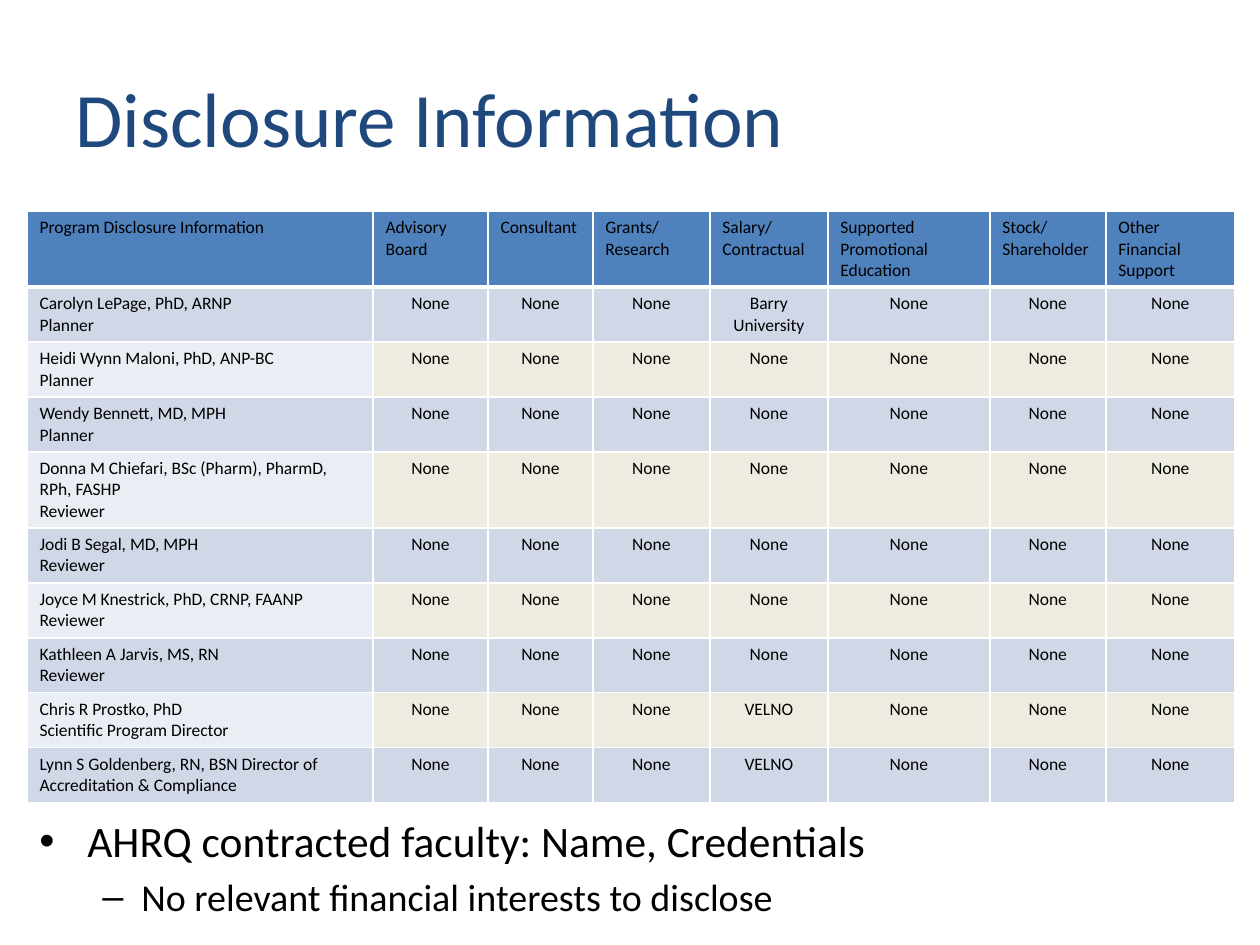
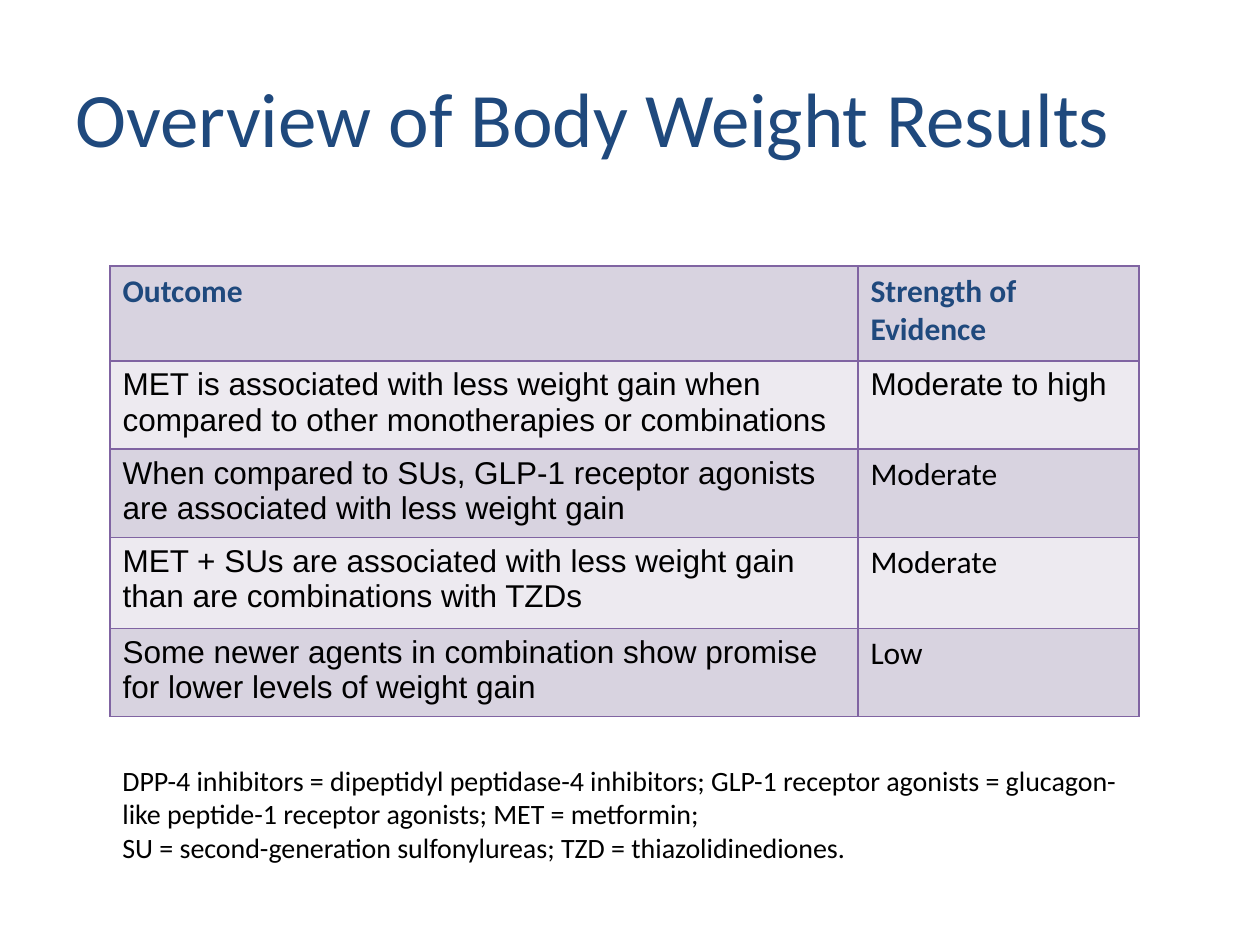
"""Build the disclosure and body weight results slides."""
import lxml.etree
import pptx
import pptx.dml.color
import pptx.enum.text
import pptx.oxml.ns
import pptx.util

PAGE = (1260, 945)
TITLE_BOX = (63, 38, 1134, 158)

THEME = {
    "body_font": "Calibri", "result_font": "Arial",
    "title": "1F497D", "ink": "000000", "white": "FFFFFF",
    "head": "4F81BD", "band": "D0D8E8", "pale_name": "E9EDF4", "pale_value": "EEECE1",
    "violet": "8064A2", "violet_band": "D8D3E0", "violet_pale": "EDEAF0",
    "title_size": 44, "point_size": 24.8, "subpoint_size": 21.7,
    "disclosure_size": 10, "result_size": 18, "note_size": 16,
}

DISCLOSURE_TITLE = "Disclosure Information"
DISCLOSURE_HEADS = [
    "Program Disclosure Information", "Advisory Board", "Consultant", "Grants/\nResearch",
    "Salary/\nContractual", "Supported Promotional Education", "Stock/Shareholder",
    "Other Financial Support",
]
PEOPLE = [
    ("Carolyn LePage, PhD, ARNP\nPlanner", "Barry University"),
    ("Heidi Wynn Maloni, PhD, ANP-BC\nPlanner", "None"),
    ("Wendy Bennett, MD, MPH\nPlanner", "None"),
    ("Donna M Chiefari, BSc (Pharm), PharmD, RPh, FASHP\nReviewer", "None"),
    ("Jodi B Segal, MD, MPH\nReviewer", "None"),
    ("Joyce M Knestrick, PhD, CRNP, FAANP\nReviewer", "None"),
    ("Kathleen A Jarvis, MS, RN\nReviewer", "None"),
    ("Chris R Prostko, PhD\nScientific Program Director", "VELNO"),
    ("Lynn S Goldenberg, RN, BSN Director of Accreditation & Compliance", "VELNO"),
]
SALARY_COLUMN = DISCLOSURE_HEADS.index("Salary/\nContractual")
DISCLOSURE_ORIGIN = (27, 211)
DISCLOSURE_WIDTHS = [346, 115, 105, 117, 118, 162, 116, 129]
DISCLOSURE_HEIGHTS = [76, 55, 55, 55, 76, 55, 55, 55, 55, 55]
FACULTY_BOX = (27, 808, 1208, 103)
FACULTY_POINTS = [
    ("AHRQ contracted faculty: Name, Credentials",
     {"size": THEME["point_size"], "bullet": "•", "indent": (48, 48)}),
    ("No relevant financial interests to disclose",
     {"size": THEME["subpoint_size"], "bullet": "–", "indent": (102, 39),
      "level": 1, "before": 4.3}),
]

RESULTS_TITLE = "Overview of Body Weight Results"
RESULTS_HEADS = ["Outcome", "Strength of Evidence"]
RESULTS = [
    ("MET is associated with less weight gain when compared to other monotherapies "
     "or combinations", "Moderate to high"),
    ("When compared to SUs, GLP-1 receptor agonists are associated with less weight gain",
     "Moderate"),
    ("MET + SUs are associated with less weight gain than are combinations with TZDs",
     "Moderate"),
    ("Some newer agents in combination show promise for lower levels of weight gain", "Low"),
]
RESULTS_ORIGIN = (110, 266)
RESULTS_WIDTHS = [748, 281]
RESULTS_HEIGHTS = [95, 88, 88, 91, 88]
NOTE_BOX = (110, 757, 1029, 115)
ABBREVIATIONS = [
    "DPP-4 inhibitors = dipeptidyl peptidase-4 inhibitors; GLP-1 receptor agonists = "
    "glucagon-like peptide-1 receptor agonists; MET = metformin;",
    "SU = second-generation sulfonylureas; TZD = thiazolidinediones.",
]


def px(length):
    return round(length * 914400 / 126)


def rgb(color):
    return pptx.dml.color.RGBColor.from_string(color)


def add_element(parent, tag, **attributes):
    return lxml.etree.SubElement(parent, pptx.oxml.ns.qn(tag), attributes)


def write(paragraph, text, size, color=THEME["ink"], font=THEME["body_font"], bold=False,
          centered=False, bullet=None, indent=(0, 0), level=0, before=0):
    paragraph.text = text
    paragraph.level = level
    paragraph.space_before = pptx.util.Pt(before)
    align = pptx.enum.text.PP_ALIGN
    paragraph.alignment = align.CENTER if centered else align.LEFT
    if bullet:
        properties = paragraph._p.get_or_add_pPr()
        properties.set("marL", str(px(indent[0])))
        properties.set("indent", str(-px(indent[1])))
        add_element(properties, "a:buFont", typeface="Arial")
        add_element(properties, "a:buChar", char=bullet)
    for run in paragraph.runs:
        run.font.size = pptx.util.Pt(size)
        run.font.name = font
        run.font.bold = bold
        run.font.color.rgb = rgb(color)
    for line_break in paragraph._p.findall(pptx.oxml.ns.qn("a:br")):
        add_element(line_break, "a:rPr", sz=str(round(size * 100)))


def add_text(slide, box, lines, middle=False):
    frame = slide.shapes.add_textbox(*map(px, box)).text_frame
    frame.word_wrap = True
    anchor = pptx.enum.text.MSO_ANCHOR
    frame.vertical_anchor = anchor.MIDDLE if middle else anchor.TOP
    for number, (text, style) in enumerate(lines):
        write(frame.add_paragraph() if number else frame.paragraphs[0], text, **style)


def add_titled_slide(deck, title):
    slide = deck.slides.add_slide(deck.slide_layouts[6])
    style = {"size": THEME["title_size"], "color": THEME["title"]}
    add_text(slide, TITLE_BOX, [(title, style)], middle=True)
    return slide


def set_borders(cell, color, top=1, bottom=1):
    properties = cell._tc.get_or_add_tcPr()
    edges = (("a:lnL", 1), ("a:lnR", 1), ("a:lnT", top), ("a:lnB", bottom))
    for position, (tag, points) in enumerate(edges):
        edge = add_element(properties, tag, w=str(pptx.util.Pt(points)))
        add_element(add_element(edge, "a:solidFill"), "a:srgbClr", val=color)
        properties.insert(position, edge)


def add_grid(slide, origin, widths, heights, rows, look, border, head_rule=1):
    """Add a table whose look(row, column) gives each cell's fill and text format."""
    box = (*origin, sum(widths), sum(heights))
    grid = slide.shapes.add_table(len(rows), len(widths), *map(px, box)).table
    grid.horz_banding = False
    for column, width in zip(grid.columns, widths):
        column.width = px(width)
    for row, height in zip(grid.rows, heights):
        row.height = px(height)
    for r, row in enumerate(rows):
        for c, text in enumerate(row):
            cell = grid.cell(r, c)
            fill, style = look(r, c)
            cell.fill.solid()
            cell.fill.fore_color.rgb = rgb(fill)
            set_borders(cell, border, top=head_rule if r == 1 else 1,
                        bottom=head_rule if r == 0 else 1)
            write(cell.text_frame.paragraphs[0], text, **style)


def disclosure_look(row, column):
    if row == 0:
        fill = THEME["head"]
    elif row % 2:
        fill = THEME["band"]
    else:
        fill = THEME["pale_value"] if column else THEME["pale_name"]
    return fill, {"size": THEME["disclosure_size"], "centered": row > 0 and column > 0}


def results_look(row, column):
    fill = THEME["violet_pale"] if row % 2 else THEME["violet_band"]
    style = {"size": THEME["result_size"]}
    if row == 0:
        style.update(color=THEME["title"], bold=True)
    elif column == 0 or row == 1:
        style["font"] = THEME["result_font"]
    return fill, style


def disclosure_row(person, salary):
    row = [person] + ["None"] * (len(DISCLOSURE_HEADS) - 1)
    row[SALARY_COLUMN] = salary
    return row


def main():
    deck = pptx.Presentation()
    deck.slide_width, deck.slide_height = map(px, PAGE)

    disclosure = add_titled_slide(deck, DISCLOSURE_TITLE)
    disclosure_rows = [DISCLOSURE_HEADS] + [disclosure_row(*entry) for entry in PEOPLE]
    add_grid(disclosure, DISCLOSURE_ORIGIN, DISCLOSURE_WIDTHS, DISCLOSURE_HEIGHTS,
             disclosure_rows, disclosure_look, THEME["white"], head_rule=3)
    add_text(disclosure, FACULTY_BOX, FACULTY_POINTS)

    results = add_titled_slide(deck, RESULTS_TITLE)
    note_style = {"size": THEME["note_size"]}
    add_text(results, NOTE_BOX, [(line, note_style) for line in ABBREVIATIONS])
    add_grid(results, RESULTS_ORIGIN, RESULTS_WIDTHS, RESULTS_HEIGHTS,
             [RESULTS_HEADS] + RESULTS, results_look, THEME["violet"])

    deck.save("out.pptx")


if __name__ == "__main__":
    main()
